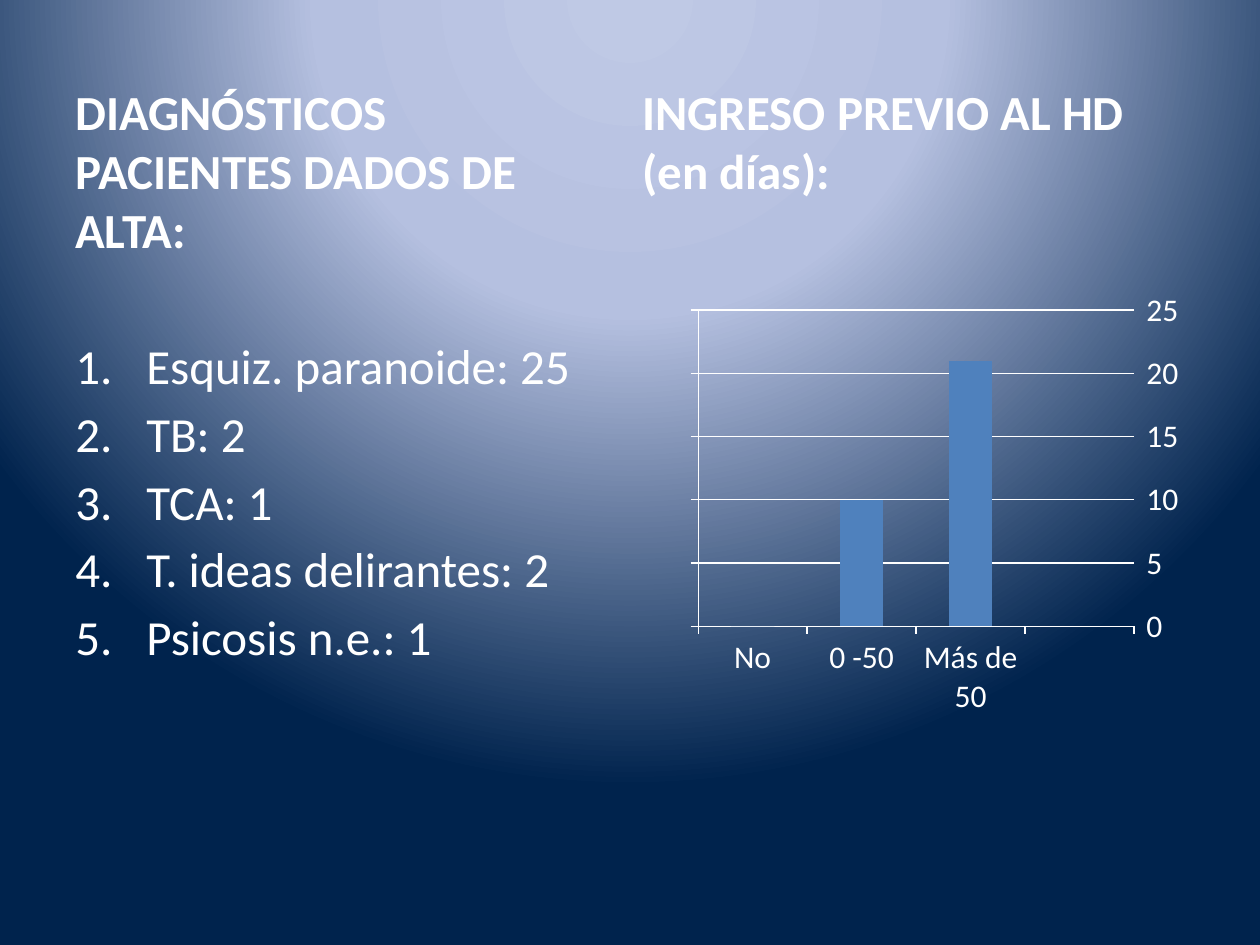
from lxml import etree
from pptx import Presentation
from pptx import util as u
from pptx.chart.data import CategoryChartData
from pptx.dml.color import RGBColor
from pptx.enum import chart as ch, text as tx
from pptx.oxml import parse_xml
from pptx.oxml.ns import nsdecls, qn

HUES = {"text": "FFFFFF", "bar": "4F81BD"}
GLOW = [(0, "BFC9E5"), (40, "B5C0E0"), (100, "00234D")]
FONT = "Calibri"
HEADS = ["DIAGNÓSTICOS PACIENTES DADOS DE ALTA:", "INGRESO PREVIO AL HD (en días):"]
CASES = ["Esquiz. paranoide: 25", "TB: 2", "TCA: 1", "T. ideas delirantes: 2", "Psicosis n.e.: 1"]
STAYS = [("No", 0), ("0 -50", 10), ("Más de 50", 21), ("", None)]
BOXES = [(1.27, 1.52, 11.23, 15.5), (12.7, 1.52, 11.23, 17)]
CHART = (4.7, 3.94, 19.53, 11)
PLOT = {"x": 0.48, "y": 0.21, "w": 0.45, "h": 0.58}


def hue(name):
    return RGBColor.from_string(HUES[name])


def style(font, size, bold=False):
    font.name, font.size, font.bold = FONT, u.Pt(size), bold
    font.color.rgb = hue("text")


def write(frame, words, size=28, bold=False, before=0, number=False):
    para = frame.paragraphs[0]
    if para.runs:
        para = frame.add_paragraph()
    para.alignment = tx.PP_ALIGN.LEFT
    para.space_before = u.Pt(before)
    run = para.add_run()
    run.text = words
    style(run.font, size, bold)
    if number:
        props = para._p.get_or_add_pPr()
        props.set("marL", str(u.Cm(1.43)))
        props.set("indent", str(u.Cm(-1.43)))
        etree.SubElement(props, qn("a:buFont"), typeface="+mj-lt")
        etree.SubElement(props, qn("a:buAutoNum"), type="arabicPeriod")


def paint(slide):
    slide.background.fill.solid()
    back = slide._element.find(".//" + qn("p:bgPr"))
    stops = "".join(
        f'<a:gs pos="{pos * 1000}"><a:srgbClr val="{tint}"/></a:gs>' for pos, tint in GLOW
    )
    grad = parse_xml(
        f'<a:gradFill {nsdecls("a")} rotWithShape="1"><a:gsLst>{stops}</a:gsLst>'
        '<a:path path="circle"><a:fillToRect l="50000" t="-80000" r="50000" b="180000"/>'
        "</a:path></a:gradFill>"
    )
    back.replace(back[0], grad)


def place(plot):
    old = plot.find(qn("c:layout"))
    if old is not None:
        plot.remove(old)
    layout = etree.Element(qn("c:layout"))
    plot.insert(0, layout)
    manual = etree.SubElement(layout, qn("c:manualLayout"))
    rules = {"layoutTarget": "inner", "xMode": "edge", "yMode": "edge", **PLOT}
    for key, val in rules.items():
        etree.SubElement(manual, qn("c:" + key), val=str(val))


def draw(slide):
    data = CategoryChartData()
    data.categories = [name for name, _ in STAYS]
    data.add_series("Series 1", [days for _, days in STAYS])
    kind = ch.XL_CHART_TYPE.COLUMN_STACKED
    chart = slide.shapes.add_chart(kind, *map(u.Cm, CHART), data).chart
    chart.has_legend = chart.has_title = False
    style(chart.font, 18)
    plot = chart.plots[0]
    plot.gap_width, plot.overlap, plot.vary_by_categories = 150, 100, False
    fill = plot.series[0].format.fill
    fill.solid()
    fill.fore_color.rgb = hue("bar")
    cats, vals = chart.category_axis, chart.value_axis
    vals.minimum_scale, vals.maximum_scale, vals.major_unit = 0, 25, 5
    vals.has_major_gridlines = True
    vals.tick_label_position = ch.XL_TICK_LABEL_POSITION.HIGH
    for axis in (cats, vals):
        axis.major_tick_mark = ch.XL_TICK_MARK.OUTSIDE
    for part in (cats, vals, vals.major_gridlines):
        part.format.line.color.rgb = hue("text")
        part.format.line.width = u.Pt(0.75)
    place(chart._chartSpace.chart.plotArea)


def main():
    deck = Presentation()
    deck.slide_width, deck.slide_height = u.Cm(25.4), u.Cm(19.05)
    slide = deck.slides.add_slide(deck.slide_layouts[6])
    paint(slide)
    for head, box, items in zip(HEADS, BOXES, (CASES, [])):
        frame = slide.shapes.add_textbox(*map(u.Cm, box)).text_frame
        frame.word_wrap = True
        write(frame, head, bold=True)
        for i, item in enumerate(items):
            write(frame, item, before=5 if i else 44.5, number=True)
    draw(slide)
    deck.save("out.pptx")


if __name__ == "__main__":
    main()
